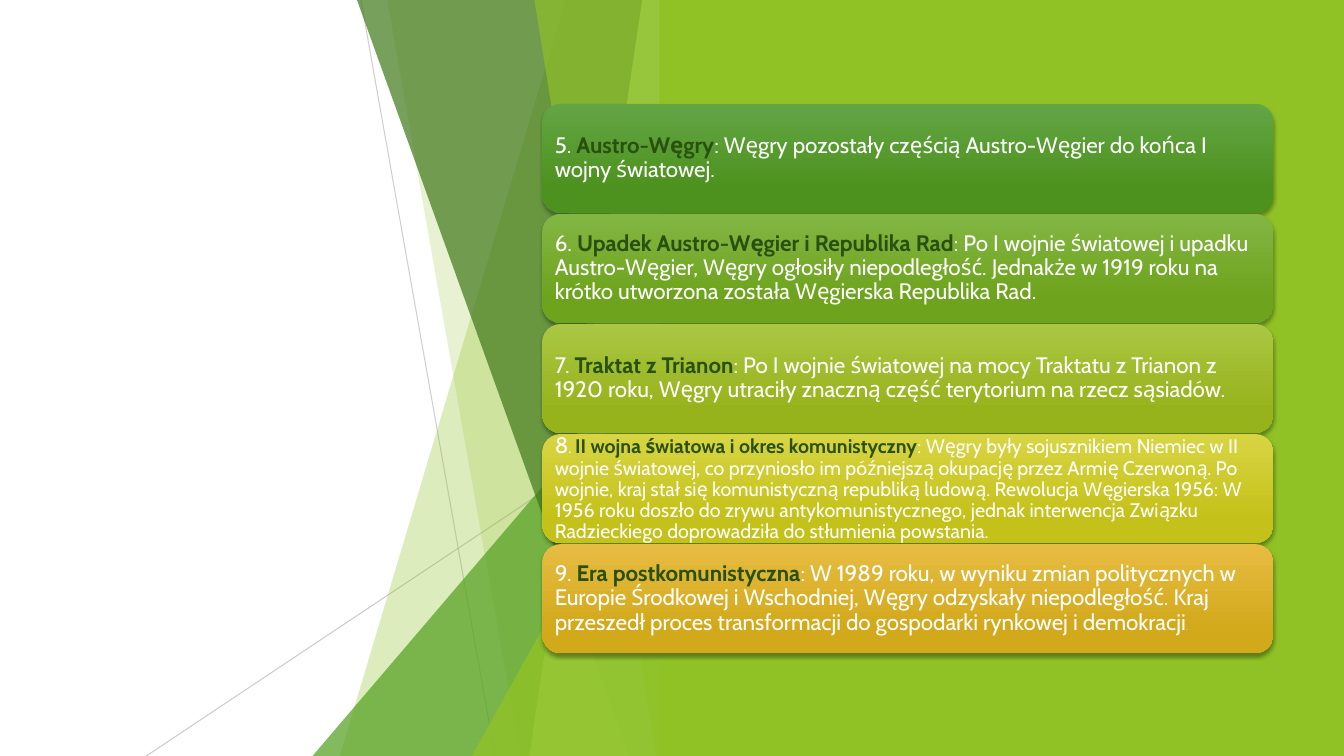
import pptx
import pptx.util
import pptx.dml.color
import pptx.enum.shapes
import pptx.enum.text
import pptx.oxml
import pptx.oxml.ns

Inches, Pt = pptx.util.Inches, pptx.util.Pt
MSO_SHAPE = pptx.enum.shapes.MSO_SHAPE
qn = pptx.oxml.ns.qn
NS = pptx.oxml.ns.nsdecls("a")

WIDTH, HEIGHT = 13.33, 7.5
WHITE, GREEN, DARK = "FFFFFF", "90C226", "2A5010"

# Each facet reaches the right edge of the band.
# Quads: (left at top, left at bottom); triangles: (left, top)
FACETS = [
    ("quad", 2.51, 0.27, GREEN, 30),
    ("quad", 0.74, 2.06, GREEN, 20),
    ("triangle", 0, 3.33, "54A021", 72),
    ("quad", 0.44, 3.14, "3F7819", 70),
    ("quad", 3.27, 2.15, "C0E474", 70),
    ("quad", 2.2, 3.41, GREEN, 65),
    ("triangle", 1.58, 3.93, GREEN, 80),
]

# Gradient colours, then runs of (text, size, colour)
ERAS = [
    ("63A545", "4D921E", [
        ("5. ", 16, WHITE), ("Austro-Węgry", 16, DARK),
        (": Węgry pozostały częścią Austro-Węgier do końca I wojny światowej.", 16, WHITE)]),
    ("82B644", "6EA31D", [
        ("6. ", 16, WHITE), ("Upadek Austro-Węgier i Republika Rad", 16, DARK),
        (": Po I wojnie światowej i upadku Austro-Węgier, Węgry ogłosiły niepodległość. "
         "Jednakże w 1919 roku na krótko utworzona została Węgierska Republika Rad.", 16, WHITE)]),
    ("AAC744", "97B31C", [
        ("7. ", 16, WHITE), ("Traktat z Trianon", 16, DARK),
        (": Po I wojnie światowej na mocy Traktatu z Trianon z 1920 roku, Węgry utraciły "
         "znaczną część terytorium na rzecz sąsiadów.", 16, WHITE)]),
    ("D8D543", "C4C11A", [
        ("8", 16, WHITE), (". ", 11, WHITE),
        ("II wojna światowa i okres komunistyczny", 14, DARK),
        (": Węgry były sojusznikiem Niemiec w II wojnie światowej, co przyniosło im "
         "późniejszą okupację przez Armię Czerwoną. Po wojnie, kraj stał się komunistyczną "
         "republiką ludową. Rewolucja Węgierska 1956: W 1956 roku doszło do zrywu "
         "antykomunistycznego, jednak interwencja Związku Radzieckiego doprowadziła do "
         "stłumienia powstania.", 14, WHITE)]),
    ("E7BC43", "D2A91B", [
        ("9. ", 16, WHITE), ("Era postkomunistyczna", 16, DARK),
        (": W 1989 roku, w wyniku zmian politycznych w Europie Środkowej i Wschodniej, "
         "Węgry odzyskały niepodległość. Kraj przeszedł proces transformacji do gospodarki "
         "rynkowej i demokracji", 16, WHITE), (".", 5, WHITE)]),
]


def rgb(color):
    return pptx.dml.color.RGBColor.from_string(color)


def set_alpha(s, percent):
    """Make the first colour of a shape or connector translucent."""
    clr = next(s._element.spPr.iter(qn("a:srgbClr")))
    clr.append(pptx.oxml.parse_xml(f'<a:alpha {NS} val="{percent * 1000}"/>'))


def paint(s, color):
    s.shadow.inherit = False
    s.line.fill.background()
    s.fill.solid()
    s.fill.fore_color.rgb = rgb(color)


def add_line(s, start, end, alpha):
    c = s.shapes.add_connector(pptx.enum.shapes.MSO_CONNECTOR.STRAIGHT,
                               *map(Inches, start + end))
    c.line.color.rgb = rgb("BFBFBF")
    c.line.width = Pt(0.75)
    set_alpha(c, alpha)
    c._element.spPr.append(pptx.oxml.parse_xml(f"<a:effectLst {NS}/>"))


def add_facets(s, left, width, height):
    """Draw the fan of translucent facets in a band from the top of the slide."""
    right = left + width
    add_line(s, (left + 0.48, 0), (left + 1.81, height), 75)
    add_line(s, (right, 4.03), (left - 1.65, height), 80)
    for kind, a, b, color, alpha in FACETS:
        if kind == "quad":
            corners = [(left + a, 0), (right, 0), (right, height), (left + b, height)]
            points = [(Inches(x), Inches(y)) for x, y in corners]
            fb = s.shapes.build_freeform(*points[0])
            fb.add_line_segments(points[1:], close=True)
            facet = fb.convert_to_shape()
        else:
            facet = s.shapes.add_shape(
                MSO_SHAPE.ISOSCELES_TRIANGLE, Inches(left + a), Inches(b),
                Inches(width - a), Inches(height - b))
            facet.adjustments[0] = 1
        paint(facet, color)
        set_alpha(facet, alpha)


def add_panel(s, left, top, width, height):
    panel = s.shapes.add_shape(MSO_SHAPE.RECTANGLE, *map(Inches, (left, top, width, height)))
    paint(panel, GREEN)


def add_era(s, left, top, width, height, light, deep, runs):
    card = s.shapes.add_shape(MSO_SHAPE.ROUNDED_RECTANGLE,
                              *map(Inches, (left, top, width, height)))
    card.line.fill.background()
    card.fill.gradient()
    card.fill.gradient_angle = 270
    for stop, color, position in zip(card.fill.gradient_stops, (light, deep), (0, 0.78)):
        stop.color.rgb = rgb(color)
        stop.position = position
    card.shadow.inherit = False
    card._element.spPr.find(qn("a:effectLst")).append(pptx.oxml.parse_xml(
        f'<a:outerShdw {NS} blurRad="{Pt(3)}" dist="{Pt(2)}" dir="5400000" rotWithShape="0">'
        '<a:srgbClr val="000000"><a:alpha val="35000"/></a:srgbClr></a:outerShdw>'))

    tf = card.text_frame
    tf.word_wrap = True
    tf.vertical_anchor = pptx.enum.text.MSO_ANCHOR.MIDDLE
    tf.margin_left = tf.margin_right = tf.margin_top = tf.margin_bottom = Inches(0.07)
    p = tf.paragraphs[0]
    p.alignment = pptx.enum.text.PP_ALIGN.LEFT
    p.line_spacing = 0.9
    for text, size, color in runs:
        r = p.add_run()
        r.text = text
        r.font.name = "Cabin"
        r.font.size = Pt(size)
        r.font.bold = color == DARK
        r.font.color.rgb = rgb(color)


def add_timeline(s, left, top, width, height):
    """Stack one card per era, with equal small gaps."""
    gap = 0.01
    card_height = (height - gap * (len(ERAS) - 1)) / len(ERAS)
    for i, era in enumerate(ERAS):
        add_era(s, left, top + i * (card_height + gap), width, card_height, *era)


def main():
    prs = pptx.Presentation()
    prs.slide_width, prs.slide_height = Inches(WIDTH), Inches(HEIGHT)
    s = prs.slides.add_slide(prs.slide_layouts[6])
    add_facets(s, 3.1, 3.56, HEIGHT)
    add_panel(s, 6.54, 0, WIDTH - 6.54, HEIGHT)
    add_timeline(s, 5.38, 1.03, 7.25, 5.45)
    prs.save("out.pptx")


if __name__ == "__main__":
    main()
